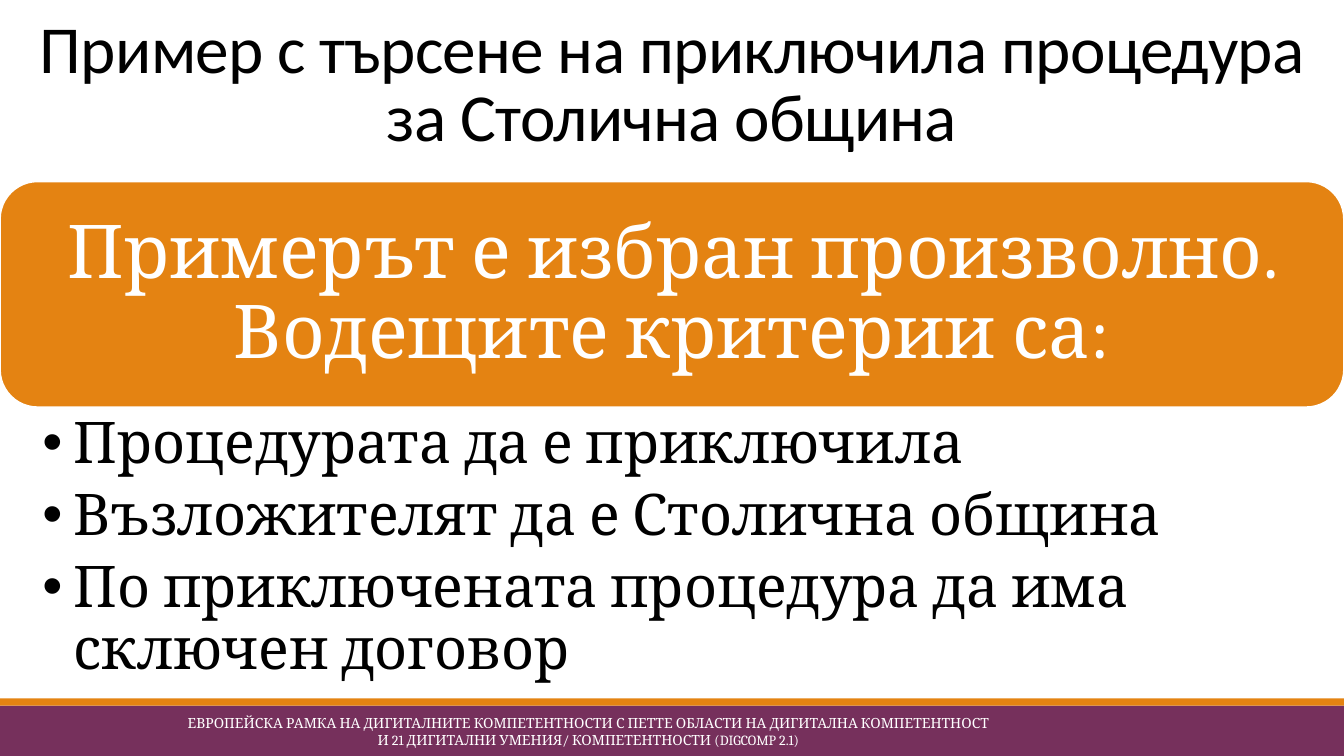
from pptx import Presentation
from pptx.dml.color import RGBColor
from pptx.enum.shapes import MSO_SHAPE as SHAPE
from pptx.enum.text import MSO_ANCHOR as ANCHOR, PP_ALIGN as ALIGN
from pptx.oxml.ns import qn
from pptx.util import Inches, Pt
from lxml import etree

ORANGE, PURPLE, WHITE, BLACK = "E48312", "76305C", "FFFFFF", "000000"
WIDTH = 13.33


def rgb(value):
    return RGBColor.from_string(value)


class SlideBuilder:
    font = "Cambria"

    def __init__(self, prs):
        self.s = prs.slides.add_slide(prs.slide_layouts[6])

    def box(self, kind, x, y, w, h, fill, line=None):
        sp = self.s.shapes.add_shape(kind, Inches(x), Inches(y), Inches(w), Inches(h))
        sp.shadow.inherit = False
        sp.fill.solid()
        sp.fill.fore_color.rgb = rgb(fill)
        if line:
            sp.line.color.rgb = rgb(line)
            sp.line.width = Pt(1.25)
        else:
            sp.line.fill.background()

    def text(self, x, y, w, h, lines, size, color, font=None, anchor=ANCHOR.MIDDLE,
             align=ALIGN.CENTER, insets=(0.1, 0.05), spacing=1, after=0,
             bullet=False, tracking=0):
        sp = self.s.shapes.add_textbox(Inches(x), Inches(y), Inches(w), Inches(h))
        tf = sp.text_frame
        tf.word_wrap = True
        tf.vertical_anchor = anchor
        tf.margin_left = tf.margin_right = Inches(insets[0])
        tf.margin_top = tf.margin_bottom = Inches(insets[1])
        for i, line in enumerate(lines):
            p = tf.paragraphs[0] if i == 0 else tf.add_paragraph()
            p.text = line
            p.alignment = align
            p.line_spacing = spacing
            p.space_after = Pt(after)
            if bullet:
                self.bullet(p)
            for r in p.runs:
                r.font.size = Pt(size)
                r.font.name = font or self.font
                r.font.color.rgb = rgb(color)
                if tracking:
                    r.font._element.set("spc", str(tracking))

    def bullet(self, p):
        pPr = p._p.get_or_add_pPr()
        pPr.set("marL", str(Inches(0.31)))
        pPr.set("indent", str(-Inches(0.31)))
        etree.SubElement(pPr, qn("a:buFont")).set("typeface", "Arial")
        etree.SubElement(pPr, qn("a:buChar")).set("char", "•")


def main():
    prs = Presentation()
    prs.slide_width, prs.slide_height = Inches(WIDTH), Inches(7.5)
    slide = SlideBuilder(prs)

    slide.box(SHAPE.RECTANGLE, 0, 7, WIDTH, 0.5, PURPLE)
    slide.box(SHAPE.RECTANGLE, 0, 6.93, WIDTH, 0.07, ORANGE)
    slide.text(0, 0, WIDTH, 1.59,
               ["Пример с търсене на приключила процедура за Столична община"],
               48, BLACK, font="Calibri", anchor=ANCHOR.BOTTOM, spacing=0.85, tracking=-50)

    slide.box(SHAPE.ROUNDED_RECTANGLE, 0, 1.8, WIDTH, 2.24, ORANGE, line=WHITE)
    slide.text(0.11, 1.91, 13.11, 2.02,
               ["Примерът е избран произволно. Водещите критерии са:"],
               53, WHITE, insets=(0.22, 0.22), spacing=0.9)
    slide.text(0, 4.04, WIDTH, 2.82,
               ["Процедурата да е приключила",
                "Възложителят да е Столична община",
                "По приключената процедура да има сключен договор"],
               41, BLACK, anchor=ANCHOR.TOP, align=ALIGN.LEFT, insets=(0.42, 0.07),
               spacing=0.9, after=7, bullet=True)

    slide.text(0, 7.06, 11.67, 0.4,
               ["ЕВРОПЕЙСКА РАМКА НА ДИГИТАЛНИТЕ КОМПЕТЕНТНОСТИ С ПЕТТЕ ОБЛАСТИ "
                "НА ДИГИТАЛНА КОМПЕТЕНТНОСТ\n"
                "И 21 ДИГИТАЛНИ УМЕНИЯ/ КОМПЕТЕНТНОСТИ (DIGCOMP 2.1)"],
               10, WHITE, insets=(0.04, 0.04))
    prs.save("out.pptx")


if __name__ == "__main__":
    main()
